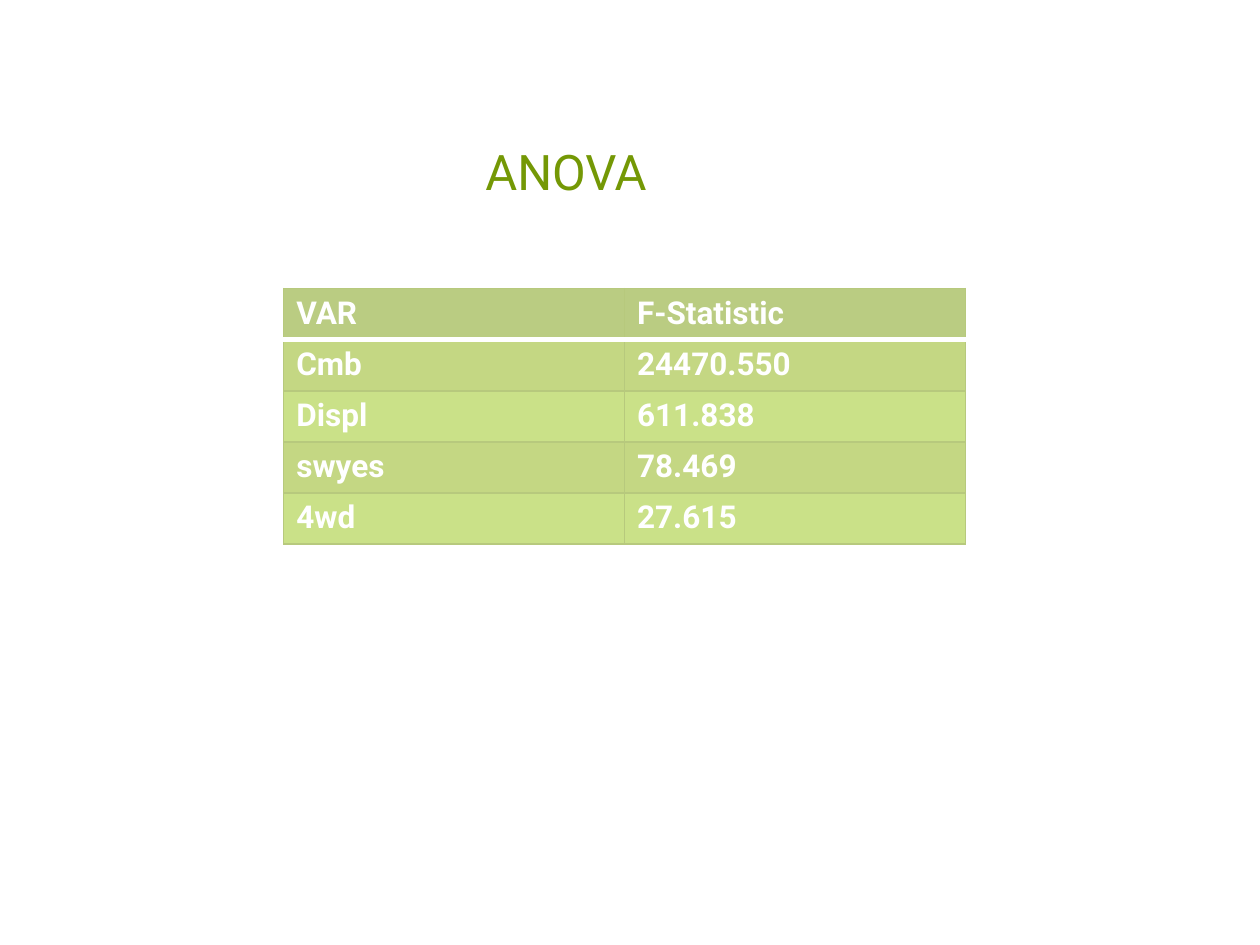
from lxml import etree
from pptx import Presentation
from pptx.dml.color import RGBColor
from pptx.enum import text
from pptx.oxml import ns
from pptx.util import Cm, Pt

# Content
TITLE = "ANOVA"
ROWS = [
    ("VAR", "F-Statistic"),
    ("Cmb", "24470.550"),
    ("Displ", "611.838"),
    ("swyes", "78.469"),
    ("4wd", "27.615"),
]

# Style
FONT = "Roboto"
GREEN, WHITE, BORDER = "749805", "FFFFFF", "B7C97D"
HEADER, BANDS = "BACC82", ("CAE188", "C4D783")
COL_W, ROW_H = Cm(6.87), Cm(1.03)


def rgb(value):
    return RGBColor.from_string(value)


def add_run(p, content, size, color, bold=False):
    r = p.add_run()
    r.text = content
    r.font.name = FONT
    r.font.size = Pt(size)
    r.font.bold = bold
    r.font.color.rgb = rgb(color)


def add_border(cell, side, color, width):
    tc_pr = cell._tc.get_or_add_tcPr()
    ln = etree.SubElement(tc_pr, ns.qn(f"a:ln{side}"), w=str(Pt(width)))
    fill = etree.SubElement(ln, ns.qn("a:solidFill"))
    etree.SubElement(fill, ns.qn("a:srgbClr"), val=color)


prs = Presentation()
prs.slide_width, prs.slide_height = Cm(25.4), Cm(19.05)
s = prs.slides.add_slide(prs.slide_layouts[5])

# Title
title = s.shapes.title
title.left, title.top, title.width, title.height = Cm(9.53), Cm(1.7), Cm(13.74), Cm(2.46)
tf = title.text_frame
tf.vertical_anchor = text.MSO_ANCHOR.BOTTOM
p = tf.paragraphs[0]
p.alignment = text.PP_ALIGN.LEFT
add_run(p, TITLE, 28, GREEN)

# Table
n_rows, n_cols = len(ROWS), len(ROWS[0])
table = s.shapes.add_table(n_rows, n_cols, Cm(5.72), Cm(5.82),
                           COL_W * n_cols, ROW_H * n_rows).table
for col in table.columns:
    col.width = COL_W
for i, values in enumerate(ROWS):
    table.rows[i].height = ROW_H
    for j, value in enumerate(values):
        cell = table.cell(i, j)
        add_run(cell.text_frame.paragraphs[0], value, 18, WHITE, bold=True)
        # A thick white rule separates the header from the body
        rules = {"T": i == 1, "B": i == 0}
        for side in "LRTB":
            thick = rules.get(side, False)
            add_border(cell, side, WHITE if thick else BORDER, 3 if thick else 1)
        cell.fill.solid()
        cell.fill.fore_color.rgb = rgb(BANDS[i % 2] if i else HEADER)

prs.save("out.pptx")
